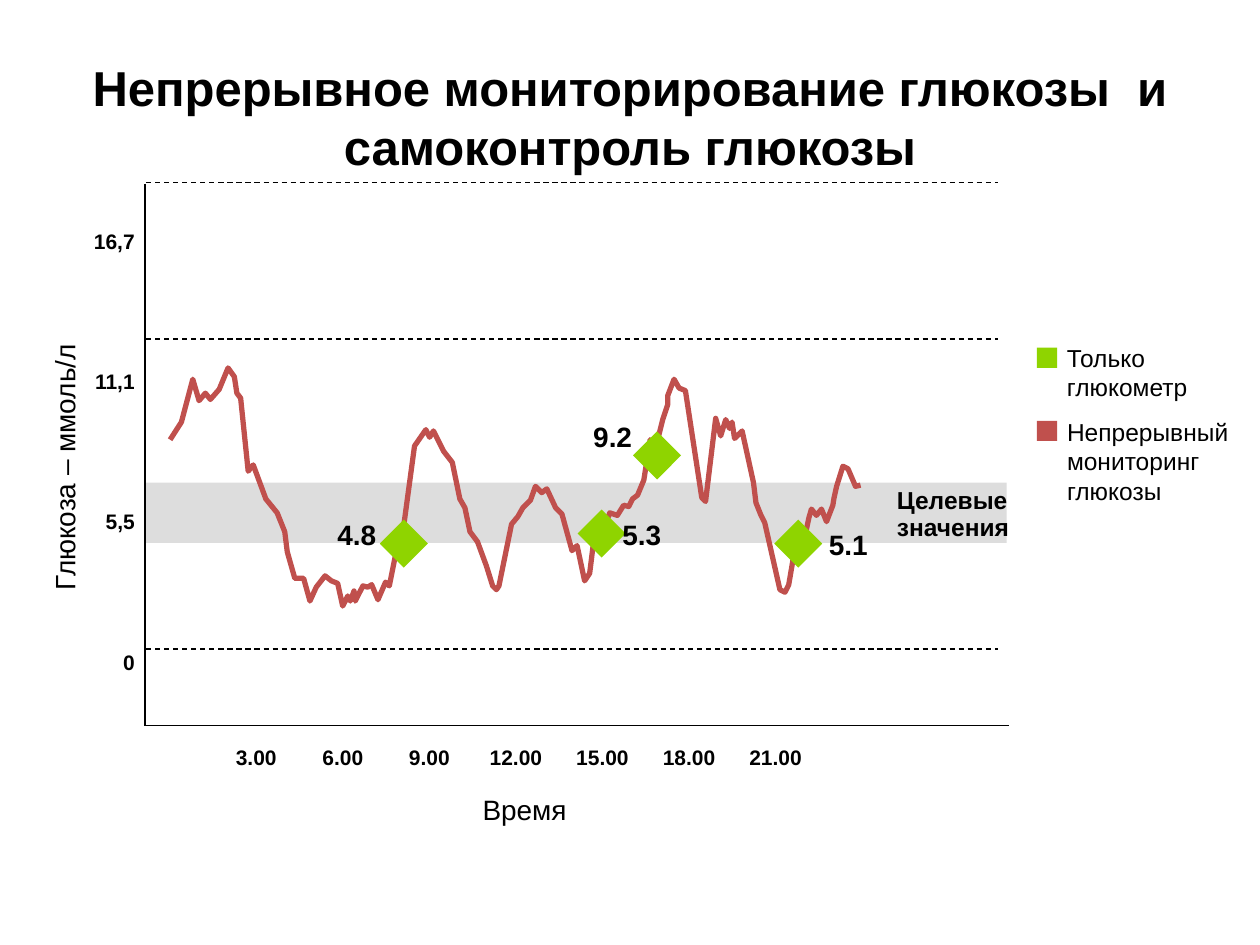
from typing import NamedTuple, Optional

from lxml import etree
from pptx import Presentation
from pptx import util as u
from pptx.dml.color import RGBColor
from pptx.enum import dml, shapes, text
from pptx.oxml import ns

COLORS = {
    "text": "000000",
    "axis": "000000",
    "meter": "8FD400",
    "monitor": "C0504D",
    "target": "DDDDDD",
}
FONT = "Arial"

# The slide is a grid of 1000 columns by 750 rows of square cells.
COLUMNS, ROWS = 1000, 750
CELL = u.Inches(10) // COLUMNS


class Box(NamedTuple):
    left: float
    top: float
    width: float
    height: float

    def emu(self) -> list[int]:
        return [round(value * CELL) for value in self]


class Label(NamedTuple):
    words: str
    box: Box
    size: int
    bold: bool = False
    inset: bool = True
    wrap: bool = True
    rotation: int = 0
    align: text.PP_ALIGN = text.PP_ALIGN.LEFT
    anchor: text.MSO_ANCHOR = text.MSO_ANCHOR.TOP
    spacing: Optional[float] = None


class Rule(NamedTuple):
    start: tuple[float, float]
    end: tuple[float, float]
    dashed: bool = False


class Block(NamedTuple):
    box: Box
    color: str
    rotation: int = 0


TITLE = Label("Непрерывное мониторирование глюкозы  и самоконтроль глюкозы",
              Box(50, 30, 900, 125), 28, bold=True,
              align=text.PP_ALIGN.CENTER, anchor=text.MSO_ANCHOR.MIDDLE)

GLUCOSE_TICKS = [["16,7"], [""], ["11,1"], [""], ["5,5"], [""], ["0"]]
TIME_TICKS = [[f"{hour}.00" for hour in range(3, 22, 3)]]

LEGEND = [
    Block(Box(823, 276, 16, 16), "meter"),
    Block(Box(823, 334, 16, 16), "monitor"),
]
TARGET_BAND = Block(Box(116, 383, 683, 48), "target")
METER_READINGS = [
    Block(Box(left, top, 27, 27), "meter", rotation=45)
    for left, top in [(307, 418), (464, 410), (508, 348), (620, 418)]
]

AXES = [Rule((115, 146), (115, 576)), Rule((115, 576), (801, 576))]
GRIDLINES = [Rule((116, row), (792, row), dashed=True) for row in (145, 269, 515)]

CAPTIONS = [
    Label("Только глюкометр", Box(837, 267, 163, 57), 14),
    Label("Непрерывный мониторинг глюкозы", Box(837, 326, 165, 81), 14),
    Label("Время", Box(383, 629, 67, 27), 16, inset=False, wrap=False),
    Label("Глюкоза – ммоль/л", Box(-48, 356, 198, 27), 16, inset=False, rotation=270),
]
VALUE_LABELS = [
    Label("Целевые значения", Box(702, 383, 127, 52), 14, bold=True, spacing=0.9),
    *(Label(value, Box(left, top, 55, 37), 16, bold=True)
      for value, left, top in [("4.8", 258, 406), ("5.3", 484, 406),
                               ("9.2", 461, 328), ("5.1", 648, 414)]),
]

MONITOR_CURVE = [
    (135, 349), (144, 335), (153, 301), (158, 318), (163, 312), (167, 317), (174, 309),
    (181, 292), (186, 299), (188, 312), (191, 316), (197, 374), (201, 369), (211, 396),
    (220, 407), (226, 422), (228, 438), (234, 459), (241, 459), (246, 477), (251, 466),
    (258, 457), (263, 461), (268, 463), (272, 481), (276, 473), (278, 477), (281, 469),
    (282, 477), (288, 465), (292, 466), (295, 464), (300, 476), (306, 462), (309, 465),
    (316, 430), (319, 428), (329, 354), (338, 341), (341, 347), (344, 342), (352, 358),
    (359, 367), (365, 396), (369, 403), (373, 422), (379, 430), (386, 449), (391, 465),
    (394, 468), (396, 465), (406, 416), (411, 410), (415, 403), (421, 397), (425, 386),
    (430, 391), (434, 388), (441, 403), (446, 408), (454, 437), (458, 433), (464, 461),
    (468, 455), (472, 423), (479, 420), (484, 407), (490, 409), (495, 401), (499, 402),
    (502, 396), (506, 393), (511, 381), (516, 349), (520, 357), (526, 333), (530, 321),
    (530, 314), (535, 301), (539, 308), (544, 310), (557, 395), (560, 398), (568, 332),
    (572, 346), (576, 333), (579, 340), (581, 335), (583, 348), (589, 342), (598, 383),
    (600, 399), (604, 409), (607, 415), (619, 468), (623, 470), (626, 464), (632, 429),
    (639, 425), (642, 411), (644, 404), (648, 409), (652, 404), (656, 414), (661, 401),
    (662, 395), (664, 386), (669, 370), (673, 372), (679, 386), (683, 385),
]


def rgb(name: str) -> RGBColor:
    return RGBColor.from_string(COLORS[name])


def style_paragraph(paragraph, size: int, bold: bool, align: text.PP_ALIGN) -> None:
    paragraph.alignment = align
    font = paragraph.font
    font.name, font.size, font.bold = FONT, u.Pt(size), bold
    font.color.rgb = rgb("text")


def add_label(slide, label: Label) -> None:
    shape = slide.shapes.add_textbox(*label.box.emu())
    shape.rotation = label.rotation
    frame = shape.text_frame
    frame.word_wrap = label.wrap
    frame.vertical_anchor = label.anchor
    if not label.inset:
        frame.margin_left = frame.margin_right = frame.margin_top = frame.margin_bottom = 0
    paragraph = frame.paragraphs[0]
    paragraph.text = label.words
    paragraph.line_spacing = label.spacing
    style_paragraph(paragraph, label.size, label.bold, label.align)


def add_tick_table(slide, box: Box, ticks: list[list[str]], align: text.PP_ALIGN) -> None:
    table = slide.shapes.add_table(len(ticks), len(ticks[0]), *box.emu()).table
    table.first_row = table.horz_banding = False
    for cell, tick in zip(table.iter_cells(), (tick for row in ticks for tick in row)):
        cell.fill.background()
        cell.margin_left = cell.margin_right = cell.margin_top = cell.margin_bottom = 0
        cell.vertical_anchor = text.MSO_ANCHOR.MIDDLE
        cell.text = tick
        style_paragraph(cell.text_frame.paragraphs[0], 12, True, align)


def add_block(slide, block: Block) -> None:
    shape = slide.shapes.add_shape(shapes.MSO_SHAPE.RECTANGLE, *block.box.emu())
    shape.shadow.inherit = False
    shape.rotation = block.rotation
    shape.fill.solid()
    shape.fill.fore_color.rgb = rgb(block.color)
    shape.line.fill.background()


def add_rule(slide, rule: Rule) -> None:
    ends = [round(value * CELL) for value in rule.start + rule.end]
    connector = slide.shapes.add_connector(shapes.MSO_CONNECTOR.STRAIGHT, *ends)
    connector.line.color.rgb = rgb("axis")
    connector.line.width = u.Pt(0.75)
    if rule.dashed:
        connector.line.dash_style = dml.MSO_LINE.DASH
    etree.SubElement(connector._element.spPr, ns.qn("a:effectLst"))


def add_curve(slide, points: list[tuple[int, int]], color: str) -> None:
    builder = slide.shapes.build_freeform(*points[0], scale=CELL)
    builder.add_line_segments(points[1:], close=False)
    shape = builder.convert_to_shape()
    shape.shadow.inherit = False
    shape.fill.background()
    shape.line.color.rgb = rgb(color)
    shape.line.width = u.Pt(3)


def main() -> None:
    presentation = Presentation()
    presentation.slide_width, presentation.slide_height = COLUMNS * CELL, ROWS * CELL
    slide = presentation.slides.add_slide(presentation.slide_layouts[6])

    add_label(slide, TITLE)
    add_tick_table(slide, Box(55, 164, 52, 390), GLUCOSE_TICKS, text.PP_ALIGN.RIGHT)
    add_tick_table(slide, Box(169, 585, 481, 34), TIME_TICKS, text.PP_ALIGN.CENTER)
    for block in [*LEGEND, TARGET_BAND]:
        add_block(slide, block)
    for rule in AXES + GRIDLINES:
        add_rule(slide, rule)
    for label in CAPTIONS:
        add_label(slide, label)
    add_curve(slide, MONITOR_CURVE, "monitor")
    for reading in METER_READINGS:
        add_block(slide, reading)
    for label in VALUE_LABELS:
        add_label(slide, label)

    presentation.save("out.pptx")


if __name__ == "__main__":
    main()
